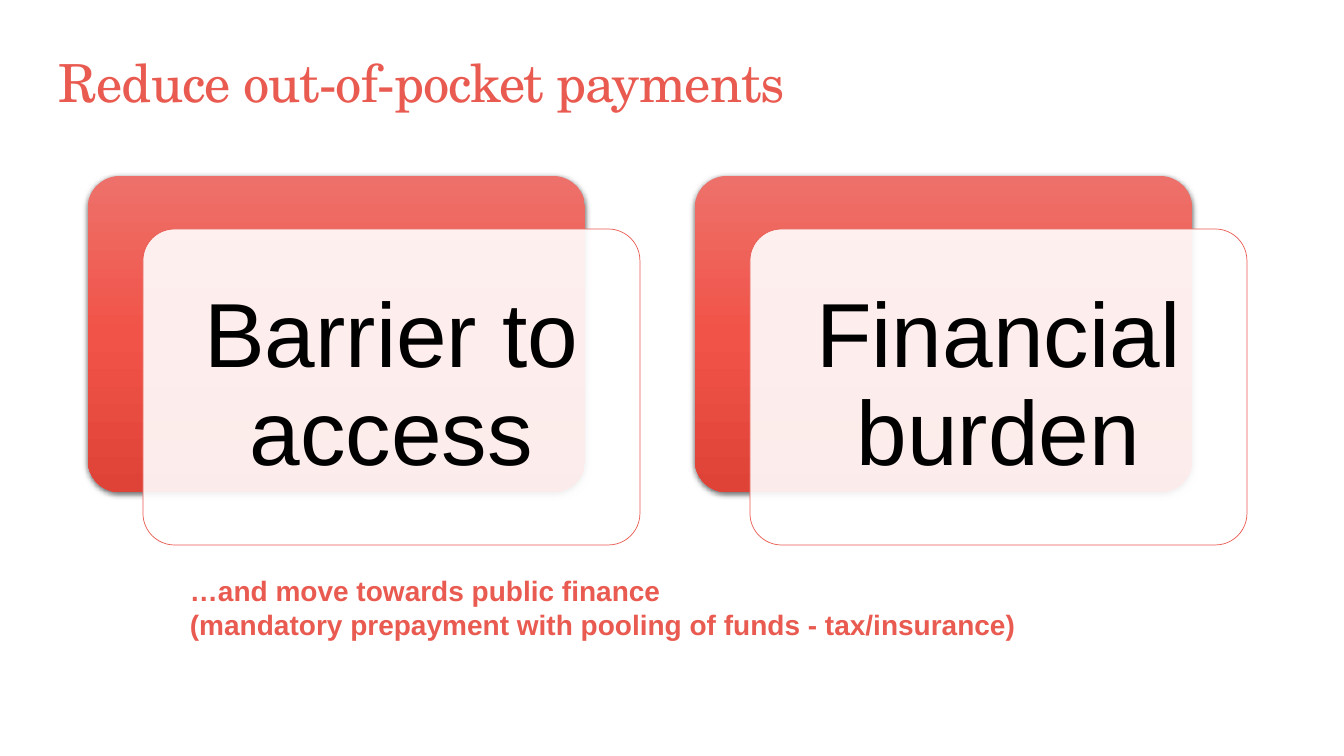
from lxml import etree
from pptx import Presentation
from pptx.dml.color import RGBColor
from pptx.enum.shapes import MSO_SHAPE
from pptx.enum.text import MSO_ANCHOR, PP_ALIGN
from pptx.oxml import parse_xml
from pptx.oxml.ns import qn
from pptx.util import Pt

ROUND = MSO_SHAPE.ROUNDED_RECTANGLE
MIDDLE = MSO_ANCHOR.MIDDLE
CENTER = PP_ALIGN.CENTER

TITLE = "Reduce out-of-pocket payments"
CARDS = ["Barrier to access", "Financial burden"]
NOTES = [
    "…and move towards public finance",
    "(mandatory prepayment with pooling of funds - tax/insurance)",
]
COLORS = {"red": "E95A50", "white": "FFFFFF", "black": "000000"}
GRAD = [(0, "ED716A"), (50, "F15348"), (100, "DF4237")]
SANS, SERIF = "Arial", "TeX Gyre Schola"

LEFT, TOP, WIDE, HIGH = 88, 176, 497, 316
STEP = 607
SHIFT_X, SHIFT_Y = 55, 53
PAD, INSET = 9, 27
NS = 'xmlns:a="http://schemas.openxmlformats.org/drawingml/2006/main"'


def px(n):
    return round(n * 914400 / 100.8)


def tint(name):
    return RGBColor.from_string(COLORS[name])


prs = Presentation()
prs.slide_width, prs.slide_height = px(1344), px(756)
slide = prs.slides.add_slide(prs.slide_layouts[6])


def text(box, lines, size, face, color, bold=False):
    shape = slide.shapes.add_textbox(*map(px, box))
    frame = shape.text_frame
    frame.word_wrap = True
    frame.text = "\n".join(lines)
    for para in frame.paragraphs:
        font = para.font
        font.size, font.name, font.bold = Pt(size), face, bold
        font.color.rgb = tint(color)
    return frame


def panel(x, y):
    shape = slide.shapes.add_shape(ROUND, px(x), px(y), px(WIDE), px(HIGH))
    shape.adjustments[0] = 0.1
    shape.shadow.inherit = False
    return shape


def shade(shape):
    shape.line.fill.background()
    stops = "".join(
        f'<a:gs pos="{at * 1000}"><a:srgbClr val="{hue}"/></a:gs>'
        for at, hue in GRAD
    )
    grad = parse_xml(
        f'<a:gradFill {NS} rotWithShape="1"><a:gsLst>{stops}</a:gsLst>'
        '<a:lin ang="5400000" scaled="0"/></a:gradFill>'
    )
    props = shape._element.spPr
    props.find(qn("a:prstGeom")).addnext(grad)
    props.find(qn("a:effectLst")).append(parse_xml(
        f'<a:outerShdw {NS} blurRad="{Pt(4.5)}" dist="{Pt(1.5)}" '
        'dir="5400000" rotWithShape="0"><a:srgbClr val="000000">'
        '<a:alpha val="63000"/></a:srgbClr></a:outerShdw>'
    ))


def glaze(shape):
    shape.fill.solid()
    shape.fill.fore_color.rgb = tint("white")
    hue = shape._element.spPr.find(qn("a:solidFill"))[0]
    etree.SubElement(hue, qn("a:alpha")).set("val", "90000")
    shape.line.color.rgb = tint("red")
    shape.line.width = Pt(0.5)


for i, label in enumerate(CARDS):
    x = LEFT + i * STEP
    shade(panel(x, TOP))
    x, y = x + SHIFT_X, TOP + SHIFT_Y
    glaze(panel(x, y))
    box = (x + PAD, y + PAD, WIDE - 2 * PAD, HIGH - 2 * PAD)
    frame = text(box, [label], 65, SANS, "black")
    frame.vertical_anchor = MIDDLE
    frame.margin_left = frame.margin_right = px(INSET)
    frame.margin_top = frame.margin_bottom = px(INSET)
    para = frame.paragraphs[0]
    para.alignment = CENTER
    para.line_spacing = 0.9

text((180, 569, 941, 78), NOTES, 20, SANS, "red", True)
head = text((49, 45, 981, 74), [TITLE], 37.5, SERIF, "red")
head.paragraphs[0].runs[0]._r.get_or_add_rPr().set("spc", "-70")

prs.save("out.pptx")
